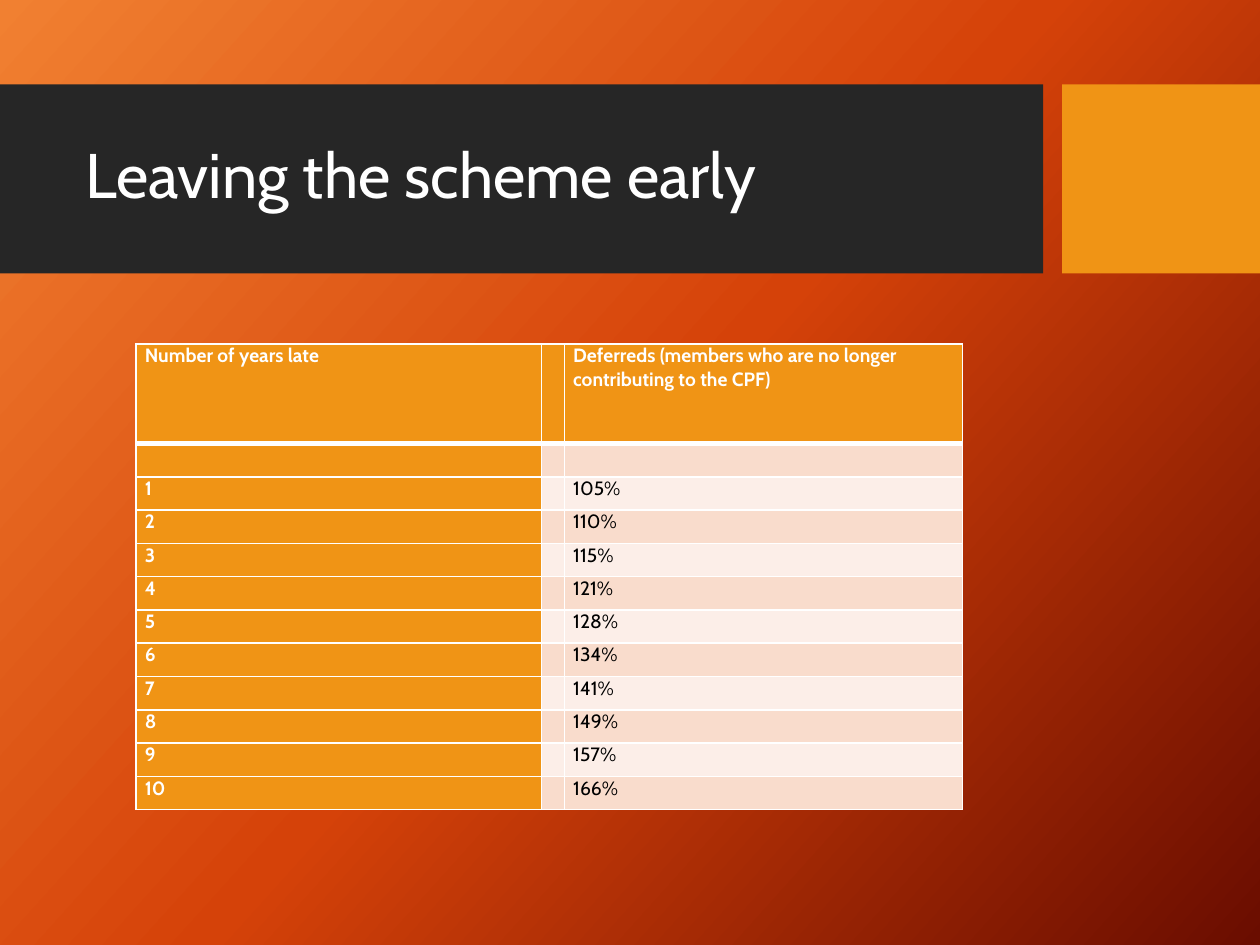
from copy import deepcopy

from lxml import etree
from pptx import Presentation
from pptx.dml.color import RGBColor
from pptx.enum.shapes import MSO_SHAPE
from pptx.enum.text import MSO_ANCHOR
from pptx.oxml.ns import qn
from pptx.util import Inches, Pt

RECTANGLE = MSO_SHAPE.RECTANGLE
MIDDLE = MSO_ANCHOR.MIDDLE

FONT = "Cabin"
WHITE, BLACK, CHARCOAL, ORANGE = "FFFFFF", "000000", "262626", "F09415"
BANDS = ("F9DCCC", "FCEEE8")
BACKGROUND_STOPS = ((0, "F18031"), (0.5, "D54209"), (1, "6A0D00"))

TABLE_SIZE = 11
COLUMN_WIDTHS = (3.22, 0.18, 3.16)
TABLE_HEIGHT, HEADER_HEIGHT = 3.7, 0.79
HEADER = ("Number of years late", "",
          "Deferreds (members who are no longer contributing to the CPF)")
LATE_RATES = ("105%", "110%", "115%", "121%", "128%",
              "134%", "141%", "149%", "157%", "166%")


def rgb(color):
    return RGBColor.from_string(color)


def paint_background(slide):
    fill = slide.background.fill
    fill.gradient()
    fill.gradient_angle = 318
    # The default gradient has two stops; add the middle one
    first_stop = slide.background._cSld.find(".//" + qn("a:gs"))
    first_stop.addnext(deepcopy(first_stop))
    for stop, (position, color) in zip(fill.gradient_stops, BACKGROUND_STOPS):
        stop.position = position
        stop.color.rgb = rgb(color)


def add_block(slide, left, top, width, height, color):
    block = slide.shapes.add_shape(RECTANGLE, Inches(left), Inches(top),
                                   Inches(width), Inches(height))
    block.shadow.inherit = False
    block.fill.solid()
    block.fill.fore_color.rgb = rgb(color)
    block.line.fill.background()


def style_text(paragraph, size, color, bold=False):
    for run in paragraph.runs:
        run.font.name = FONT
        run.font.size = Pt(size)
        run.font.bold = bold
        run.font.color.rgb = rgb(color)


def add_title(slide, text):
    title = slide.shapes.add_textbox(Inches(0.58), Inches(0.82),
                                     Inches(7.54), Inches(1.18))
    frame = title.text_frame
    frame.word_wrap = True
    frame.vertical_anchor = MIDDLE
    frame.text = text
    frame.paragraphs[0].line_spacing = 0.9
    style_text(frame.paragraphs[0], 36, WHITE)


def set_borders(cell, widths):
    properties = cell._tc.get_or_add_tcPr()
    for side, width in widths.items():
        border = etree.SubElement(properties, qn("a:ln" + side), w=str(Pt(width)))
        solid = etree.SubElement(border, qn("a:solidFill"))
        etree.SubElement(solid, qn("a:srgbClr"), val=WHITE)


def fill_cell(cell, text, row, column):
    is_header = row == 0
    is_emphasised = is_header or column == 0
    cell.margin_left = cell.margin_right = Inches(0.07)
    cell.margin_top = cell.margin_bottom = 0
    set_borders(cell, {"L": 1, "R": 1, "T": 3 if row == 1 else 1,
                       "B": 3 if is_header else 1})
    cell.fill.solid()
    cell.fill.fore_color.rgb = rgb(ORANGE if is_emphasised else BANDS[(row - 1) % 2])
    paragraph = cell.text_frame.paragraphs[0]
    if text:
        paragraph.text = text
        style_text(paragraph, TABLE_SIZE, WHITE if is_emphasised else BLACK,
                   is_emphasised)
    else:
        # Keeps empty cells from stretching their row
        etree.SubElement(paragraph._p, qn("a:endParaRPr"), sz=str(TABLE_SIZE * 100))


def add_rate_table(slide):
    rows = [HEADER, ("", "", "")]
    rows += [(str(year), "", rate) for year, rate in enumerate(LATE_RATES, 1)]
    table = slide.shapes.add_table(
        len(rows), len(COLUMN_WIDTHS), Inches(1.08), Inches(2.73),
        Inches(sum(COLUMN_WIDTHS)), Inches(TABLE_HEIGHT)).table
    for column, width in zip(table.columns, COLUMN_WIDTHS):
        column.width = Inches(width)
    body_height = (TABLE_HEIGHT - HEADER_HEIGHT) / (len(rows) - 1)
    for row, texts in enumerate(rows):
        table.rows[row].height = Inches(body_height if row else HEADER_HEIGHT)
        for column, text in enumerate(texts):
            fill_cell(table.cell(row, column), text, row, column)


def main():
    presentation = Presentation()
    presentation.slide_width = Inches(10)
    presentation.slide_height = Inches(7.5)
    slide = presentation.slides.add_slide(presentation.slide_layouts[6])

    paint_background(slide)
    # Title band and accent block
    add_block(slide, 0, 0.67, 8.28, 1.5, CHARCOAL)
    add_block(slide, 8.43, 0.67, 1.57, 1.5, ORANGE)
    add_title(slide, "Leaving the scheme early")
    add_rate_table(slide)

    presentation.save("out.pptx")


if __name__ == "__main__":
    main()
